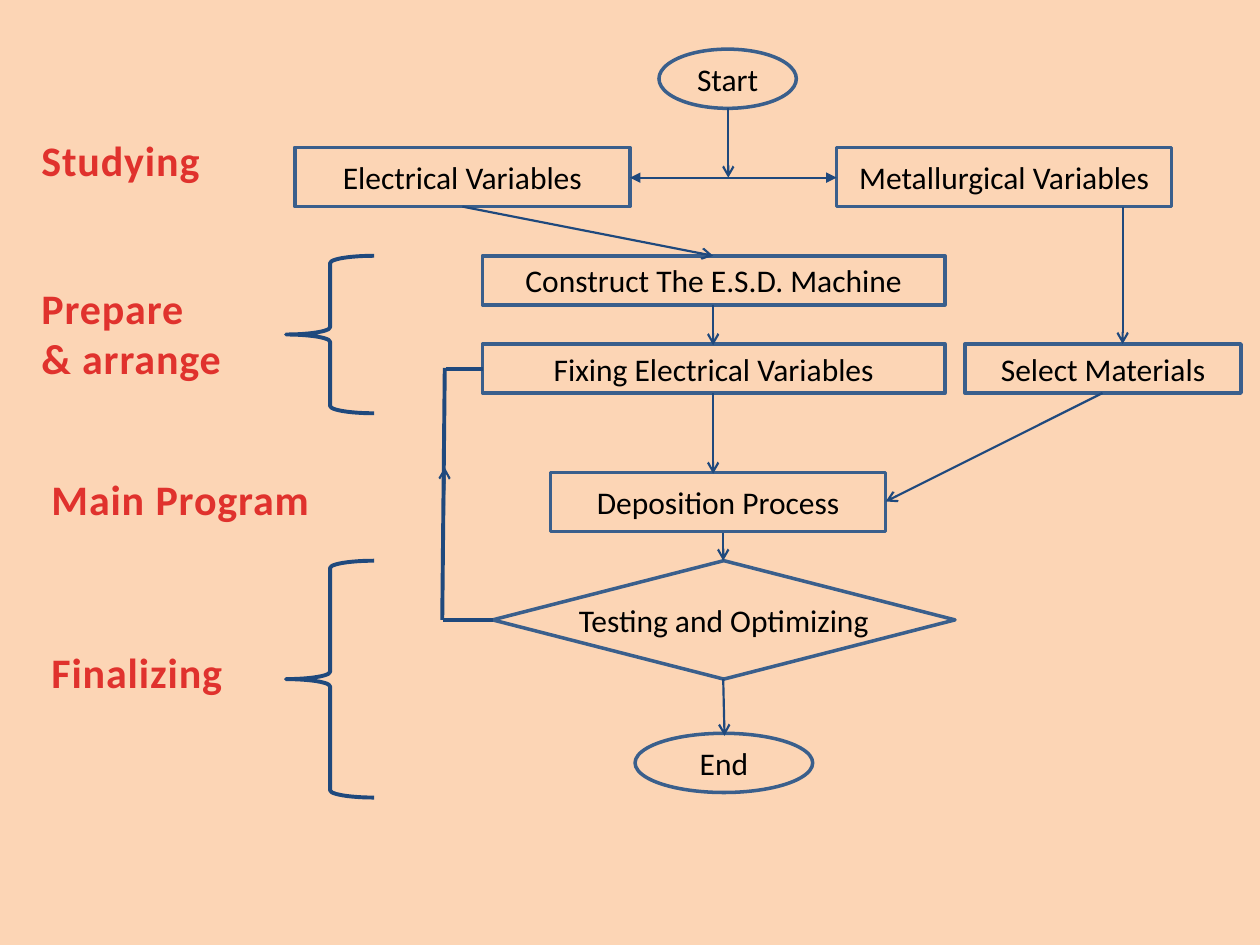
"""Build the flowchart slide of the E.S.D. work plan."""
from dataclasses import dataclass

from lxml import etree
from pptx import Presentation
from pptx.dml.color import RGBColor
from pptx.enum.shapes import MSO_CONNECTOR, MSO_SHAPE
from pptx.enum.text import MSO_ANCHOR, MSO_AUTO_SIZE, PP_ALIGN
from pptx.oxml.ns import qn
from pptx.util import Inches, Pt

STRAIGHT = MSO_CONNECTOR.STRAIGHT
RECT, OVAL = MSO_SHAPE.RECTANGLE, MSO_SHAPE.OVAL
DIAMOND, BRACE = MSO_SHAPE.DIAMOND, MSO_SHAPE.LEFT_BRACE
TOP, MIDDLE = MSO_ANCHOR.TOP, MSO_ANCHOR.MIDDLE
LEFT, CENTER, JUSTIFY = PP_ALIGN.LEFT, PP_ALIGN.CENTER, PP_ALIGN.JUSTIFY
FIT_SHAPE = MSO_AUTO_SIZE.SHAPE_TO_FIT_TEXT


@dataclass(frozen=True)
class Theme:
    """Colours, font, type sizes and line widths."""
    back: RGBColor = RGBColor(0xFC, 0xD5, 0xB5)
    outline: RGBColor = RGBColor(0x3A, 0x5F, 0x8C)
    navy: RGBColor = RGBColor(0x1F, 0x49, 0x7D)
    red: RGBColor = RGBColor(0xE0, 0x32, 0x2D)
    black: RGBColor = RGBColor(0, 0, 0)
    font: str = "Calibri"
    step_size: float = 18
    phase_size: float = 24
    outline_width: float = 2
    arrow_width: float = 1.25
    heavy_width: float = 2.25


@dataclass(frozen=True)
class Step:
    """One flowchart box."""
    text: str
    x: float
    y: float
    w: float
    h: float
    kind: MSO_SHAPE = RECT


@dataclass(frozen=True)
class Phase:
    """One red phase label."""
    text: str
    x: float
    y: float
    w: float
    h: float
    align: PP_ALIGN = LEFT


@dataclass(frozen=True)
class Link:
    """One straight line with optional arrowheads."""
    x1: float
    y1: float
    x2: float
    y2: float
    head: str = ""
    tail: str = "arrow"
    width: float = 1.25


THEME = Theme()
HEAVY = THEME.heavy_width

STEPS = [
    Step("Start", 5.23, 0.39, 1.09, 0.47, OVAL),
    Step("Electrical Variables", 2.34, 1.17, 2.66, 0.47),
    Step("Metallurgical Variables", 6.64, 1.17, 2.66, 0.47),
    Step("Construct The E.S.D. Machine", 3.83, 2.03, 3.67, 0.39),
    Step("Fixing Electrical Variables", 3.83, 2.73, 3.67, 0.39),
    Step("Select Materials", 7.66, 2.73, 2.19, 0.39),
    Step("Deposition Process", 4.37, 3.75, 2.66, 0.47),
    Step("Testing and Optimizing", 3.91, 4.45, 3.67, 0.94, DIAMOND),
    Step("End", 5.04, 5.82, 1.41, 0.47, OVAL),
]
PHASES = [
    Phase("Studying", 0.23, 1.02, 1.64, 0.5),
    Phase("Prepare\n& arrange", 0.23, 2.19, 2.89, 0.91),
    Phase("Main Program", 0.31, 3.71, 2.89, 0.5),
    Phase("Finalizing", 0.31, 5.08, 2.89, 0.5, JUSTIFY),
]
BRACES = [(2.03, 1.25), (4.45, 1.88)]
LINKS = [
    Link(5.78, 0.86, 5.78, 1.41),
    Link(6.64, 1.41, 5, 1.41, head="triangle", tail="triangle"),
    Link(3.67, 1.64, 5.66, 2.03),
    Link(8.91, 1.64, 8.91, 2.73),
    Link(5.66, 2.42, 5.66, 2.74),
    Link(5.66, 3.12, 5.66, 3.76),
    Link(8.75, 3.12, 7.03, 3.98),
    Link(5.74, 4.23, 5.74, 4.45),
    Link(5.74, 5.39, 5.75, 5.84),
    Link(3.91, 4.92, 3.52, 4.92, tail="", width=HEAVY),
    Link(3.51, 4.92, 3.53, 2.92, tail="", width=HEAVY),
    Link(3.83, 2.93, 3.54, 2.93, tail="", width=HEAVY),
    Link(3.52, 4.16, 3.53, 3.71),
]


def write(tf, text: str, *, size: float, color: RGBColor, align: PP_ALIGN,
          anchor: MSO_ANCHOR, bold: bool = False, spacing: float = 0) -> None:
    """Fill a text frame, one paragraph per line of text."""
    tf.vertical_anchor = anchor
    for i, line in enumerate(text.split("\n")):
        p = tf.add_paragraph() if i else tf.paragraphs[0]
        p.alignment = align
        r = p.add_run()
        r.text = line
        r.font.name, r.font.size = THEME.font, Pt(size)
        r.font.bold = bold
        r.font.color.rgb = color
        if spacing:
            r.font._element.set("spc", str(round(spacing * 100)))


def add_outline(s, kind: MSO_SHAPE, x: float, y: float, w: float, h: float, *,
                color: RGBColor, width: float):
    """Add an unfilled preset shape."""
    sp = s.shapes.add_shape(kind, Inches(x), Inches(y), Inches(w), Inches(h))
    sp.shadow.inherit = False
    sp.fill.background()
    sp.line.color.rgb = color
    sp.line.width = Pt(width)
    return sp


def add_step(s, step: Step) -> None:
    """Add a flowchart box with its centred text."""
    sp = add_outline(s, step.kind, step.x, step.y, step.w, step.h,
                     color=THEME.outline, width=THEME.outline_width)
    sp.text_frame.word_wrap = False
    write(sp.text_frame, step.text, size=THEME.step_size, color=THEME.black,
          align=CENTER, anchor=MIDDLE)


def add_phase(s, phase: Phase) -> None:
    """Add a red phase label."""
    sp = s.shapes.add_textbox(Inches(phase.x), Inches(phase.y),
                              Inches(phase.w), Inches(phase.h))
    tf = sp.text_frame
    tf.word_wrap = True
    tf.auto_size = FIT_SHAPE
    write(tf, phase.text, size=THEME.phase_size, color=THEME.red,
          align=phase.align, anchor=TOP, bold=True, spacing=0.5)


def add_link(s, link: Link) -> None:
    """Add a connector with its arrowheads."""
    c = s.shapes.add_connector(STRAIGHT, Inches(link.x1), Inches(link.y1),
                               Inches(link.x2), Inches(link.y2))
    c.line.color.rgb = THEME.navy
    c.line.width = Pt(link.width)
    ln = c.line._get_or_add_ln()
    for tag, kind in (("a:headEnd", link.head), ("a:tailEnd", link.tail)):
        if kind:
            etree.SubElement(ln, qn(tag)).set("type", kind)
    etree.SubElement(c._element.spPr, qn("a:effectLst"))


def main() -> None:
    """Draw the slide and save it."""
    prs = Presentation()
    prs.slide_width, prs.slide_height = Inches(10), Inches(7.5)
    s = prs.slides.add_slide(prs.slide_layouts[6])
    s.background.fill.solid()
    s.background.fill.fore_color.rgb = THEME.back
    for step in STEPS:
        add_step(s, step)
    for phase in PHASES:
        add_phase(s, phase)
    for y, h in BRACES:
        add_outline(s, BRACE, 2.27, y, 0.7, h, color=THEME.navy, width=HEAVY)
    for link in LINKS:
        add_link(s, link)
    prs.save("out.pptx")


if __name__ == "__main__":
    main()
